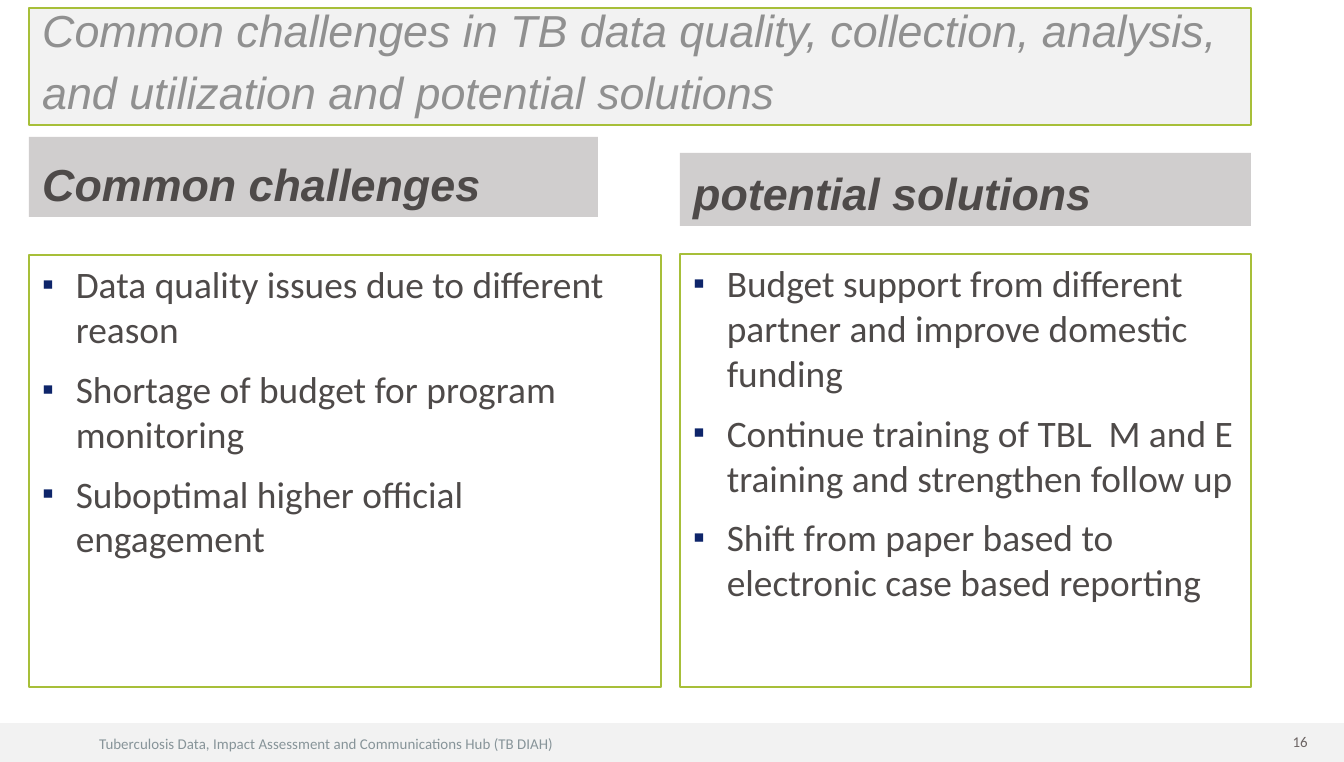
from pptx import Presentation, util as u
from pptx.dml.color import RGBColor
from pptx.enum import shapes, text
from lxml import etree

PX = 914400 / 134.4
NS = "http://schemas.openxmlformats.org/drawingml/2006/main"
TOP, MID, LOW = text.MSO_ANCHOR.TOP, text.MSO_ANCHOR.MIDDLE, text.MSO_ANCHOR.BOTTOM

deck = Presentation()
deck.slide_width, deck.slide_height = round(1344 * PX), round(762 * PX)
page = deck.slides.add_slide(deck.slide_layouts[6])


def tint(code):
    return RGBColor.from_string(code)


def bullet(para):
    props = para._p.get_or_add_pPr()
    props.set("marL", "228600")
    props.set("indent", "-228600")
    color = etree.SubElement(props, f"{{{NS}}}buClr")
    etree.SubElement(color, f"{{{NS}}}srgbClr", val="0E256A")
    etree.SubElement(props, f"{{{NS}}}buSzPct", val="90000")
    etree.SubElement(props, f"{{{NS}}}buFont", typeface="Arial")
    etree.SubElement(props, f"{{{NS}}}buChar", char="▪")


looks = {
    "title": {"size": 24, "name": "Arial", "italic": True, "color": "909090"},
    "head": {"size": 24, "name": "Arial", "bold": True, "italic": True, "color": "4E4A49"},
    "list": {"size": 20, "name": "Calibri", "color": "4E4A49"},
    "foot": {"size": 8, "name": "Calibri", "color": "879499"},
    "page": {"size": 8, "name": "Calibri", "color": "6C6463"},
}
spots = {"title": LOW, "head": LOW, "list": TOP, "foot": TOP, "page": MID}
fills = {"title": "F2F2F2", "head": "D0CECE", "band": "F2F2F2"}
edged = ("title", "list")

items = [
    ("band", (0, 723, 1344, 39), []),
    ("foot", (86, 728, 672, 32),
     ["Tuberculosis Data, Impact Assessment and Communications Hub (TB DIAH)"]),
    ("title", (29, 8, 1222, 117),
     ["Common challenges in TB data quality, collection, analysis, "
      "and utilization and potential solutions"]),
    ("head", (29, 137, 569, 80), ["Common challenges"]),
    ("list", (29, 255, 632, 432),
     ["Data quality issues due to different reason",
      "Shortage of budget for program monitoring",
      "Suboptimal higher official engagement"]),
    ("head", (680, 153, 571, 73), ["potential solutions"]),
    ("list", (680, 254, 571, 433),
     ["Budget support from different partner and improve domestic funding",
      "Continue training of TBL  M and E training and strengthen follow up",
      "Shift from paper based to electronic case based reporting"]),
    ("page", (1008, 725, 313, 32), ["16"]),
]

for kind, place, lines in items:
    rect = [round(n * PX) for n in place]
    if kind in ("foot", "page"):
        box = page.shapes.add_textbox(*rect)
    else:
        box = page.shapes.add_shape(shapes.MSO_SHAPE.RECTANGLE, *rect)
        box.shadow.inherit = False
        if kind in fills:
            box.fill.solid()
            box.fill.fore_color.rgb = tint(fills[kind])
        else:
            box.fill.background()
        if kind in edged:
            box.line.color.rgb = tint("A7BF39")
            box.line.width = u.Pt(0.75)
        else:
            box.line.fill.background()

    frame = box.text_frame
    frame.word_wrap = True
    frame.vertical_anchor = spots.get(kind, MID)
    for num, line in enumerate(lines):
        para = frame.paragraphs[0] if num == 0 else frame.add_paragraph()
        para.alignment = text.PP_ALIGN.RIGHT if kind == "page" else text.PP_ALIGN.LEFT
        if kind == "title":
            para.line_spacing = 1.15
        if kind in ("head", "list"):
            para.space_after = u.Pt(8)
        if kind == "list":
            bullet(para)
        run = para.add_run()
        run.text = line
        for key, val in looks[kind].items():
            if key == "color":
                run.font.color.rgb = tint(val)
            else:
                setattr(run.font, key, u.Pt(val) if key == "size" else val)

deck.save("out.pptx")
